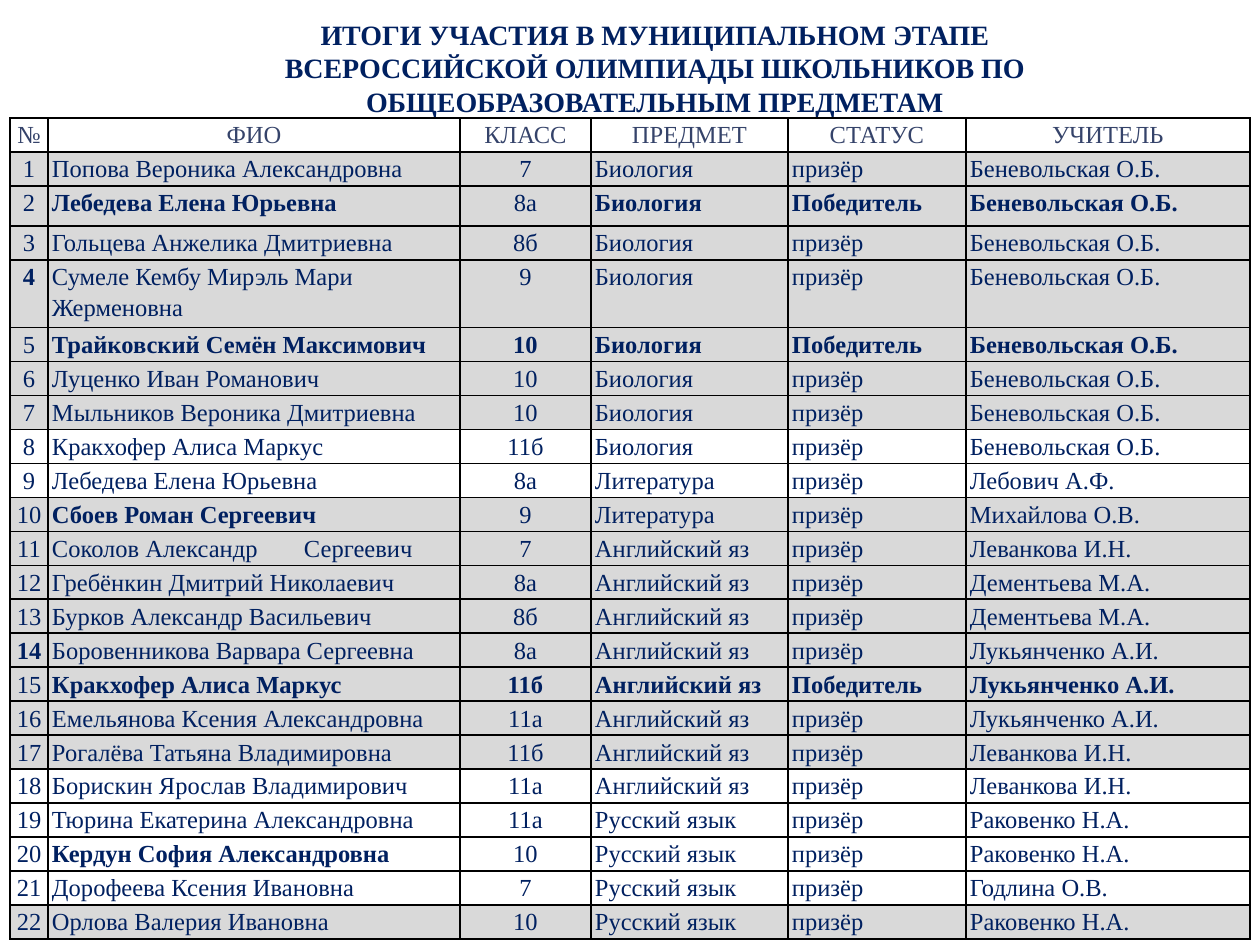
from lxml import etree
from pptx import Presentation, util as u
from pptx.dml.color import RGBColor
from pptx.enum import text
from pptx.oxml.ns import qn

TITLE = (
    "ИТОГИ УЧАСТИЯ В МУНИЦИПАЛЬНОМ ЭТАПЕ",
    "ВСЕРОССИЙСКОЙ ОЛИМПИАДЫ ШКОЛЬНИКОВ ПО ОБЩЕОБРАЗОВАТЕЛЬНЫМ ПРЕДМЕТАМ",
)
HEADER = ("№", "ФИО", "КЛАСС", "ПРЕДМЕТ", "СТАТУС", "УЧИТЕЛЬ")
BIOLOGY, LITERATURE, ENGLISH, RUSSIAN = "Биология", "Литература", "Английский яз", "Русский язык"
PRIZE, WINNER = "призёр", "Победитель"
RESULTS = [
    ("Попова Вероника Александровна", "7", BIOLOGY, PRIZE, "Беневольская О.Б."),
    ("Лебедева Елена Юрьевна", "8а", BIOLOGY, WINNER, "Беневольская О.Б."),
    ("Гольцева Анжелика Дмитриевна", "8б", BIOLOGY, PRIZE, "Беневольская О.Б."),
    ("Сумеле Кембу Мирэль Мари Жерменовна", "9", BIOLOGY, PRIZE, "Беневольская О.Б."),
    ("Трайковский Семён Максимович", "10", BIOLOGY, WINNER, "Беневольская О.Б."),
    ("Луценко Иван Романович", "10", BIOLOGY, PRIZE, "Беневольская О.Б."),
    ("Мыльников Вероника Дмитриевна", "10", BIOLOGY, PRIZE, "Беневольская О.Б."),
    ("Кракхофер Алиса Маркус", "11б", BIOLOGY, PRIZE, "Беневольская О.Б."),
    ("Лебедева Елена Юрьевна", "8а", LITERATURE, PRIZE, "Лебович А.Ф."),
    ("Сбоев Роман Сергеевич", "9", LITERATURE, PRIZE, "Михайлова О.В."),
    ("Соколов Александр\tСергеевич", "7", ENGLISH, PRIZE, "Леванкова И.Н."),
    ("Гребёнкин Дмитрий Николаевич", "8а", ENGLISH, PRIZE, "Дементьева М.А."),
    ("Бурков Александр Васильевич", "8б", ENGLISH, PRIZE, "Дементьева М.А."),
    ("Боровенникова Варвара Сергеевна", "8а", ENGLISH, PRIZE, "Лукьянченко А.И."),
    ("Кракхофер Алиса Маркус", "11б", ENGLISH, WINNER, "Лукьянченко А.И."),
    ("Емельянова Ксения Александровна", "11а", ENGLISH, PRIZE, "Лукьянченко А.И."),
    ("Рогалёва Татьяна Владимировна", "11б", ENGLISH, PRIZE, "Леванкова И.Н."),
    ("Борискин Ярослав Владимирович", "11а", ENGLISH, PRIZE, "Леванкова И.Н."),
    ("Тюрина Екатерина Александровна", "11а", RUSSIAN, PRIZE, "Раковенко Н.А."),
    ("Кердун София Александровна", "10", RUSSIAN, PRIZE, "Раковенко Н.А."),
    ("Дорофеева Ксения Ивановна", "7", RUSSIAN, PRIZE, "Годлина О.В."),
    ("Орлова Валерия Ивановна", "10", RUSSIAN, PRIZE, "Раковенко Н.А."),
]
BOLD_COLUMNS = {2: (1, 3, 4, 5), 4: (0,), 5: (1, 2, 3, 4, 5), 10: (1,),
                14: (0,), 15: (1, 2, 3, 4, 5), 20: (1,)}
PLAIN_ROWS = {0, 8, 9, 18, 19, 20, 21}
CENTRED_COLUMNS = {0, 2}

THEME = {
    "font": "Times New Roman",
    "title_size": u.Pt(16),
    "cell_size": u.Pt(14),
    "text": RGBColor.from_string("002060"),
    "header": RGBColor.from_string("35436A"),
    "shade": RGBColor.from_string("D9D9D9"),
    "border": "000000",
    "border_width": u.Pt(1),
}

PAGE_SIZE = (1260, 945)
TITLE_BOX = (118, 10, 1074, 115)
TABLE_ORIGIN = (10, 118)
COLUMN_WIDTHS = (38, 412, 131, 197, 178, 284)
ROW_HEIGHT = 34
SPECIAL_HEIGHTS = {2: 40, 3: 32, 4: 62}
CELL_MARGIN = 4


def px(length):
    return u.Emu(round(length * 914400 / 126))


def style_para(para, size, color, bold, centred):
    para.alignment = text.PP_ALIGN.CENTER if centred else text.PP_ALIGN.LEFT
    para.font.name = THEME["font"]
    para.font.size = size
    para.font.color.rgb = color
    para.font.bold = bold


def add_borders(cell):
    properties = cell._tc.get_or_add_tcPr()
    for side in ("a:lnL", "a:lnR", "a:lnT", "a:lnB"):
        line = etree.SubElement(properties, qn(side), w=str(THEME["border_width"]))
        fill = etree.SubElement(line, qn("a:solidFill"))
        etree.SubElement(fill, qn("a:srgbClr"), val=THEME["border"])


def fill_cell(cell, value, row, column):
    cell.margin_left = cell.margin_right = px(CELL_MARGIN)
    cell.margin_top = cell.margin_bottom = 0
    add_borders(cell)
    if row in PLAIN_ROWS:
        cell.fill.background()
    else:
        cell.fill.solid()
        cell.fill.fore_color.rgb = THEME["shade"]
    para = cell.text_frame.paragraphs[0]
    para.add_run().text = value
    para.line_spacing = 1.15
    style_para(para, THEME["cell_size"], THEME["text" if row else "header"],
               column in BOLD_COLUMNS.get(row, ()), row == 0 or column in CENTRED_COLUMNS)


def add_title(page):
    box = page.shapes.title
    box.left, box.top, box.width, box.height = map(px, TITLE_BOX)
    frame = box.text_frame
    frame.text = "\n".join(TITLE)
    frame.word_wrap = True
    frame.auto_size = text.MSO_AUTO_SIZE.SHAPE_TO_FIT_TEXT
    frame.vertical_anchor = text.MSO_ANCHOR.MIDDLE
    for para in frame.paragraphs:
        style_para(para, THEME["title_size"], THEME["text"], True, True)


def add_results(page):
    rows = [HEADER] + [(str(number), *result) for number, result in enumerate(RESULTS, 1)]
    heights = [SPECIAL_HEIGHTS.get(row, ROW_HEIGHT) for row in range(len(rows))]
    table = page.shapes.add_table(
        len(rows), len(HEADER), *map(px, (*TABLE_ORIGIN, sum(COLUMN_WIDTHS), sum(heights)))
    ).table
    table.first_row = table.horz_banding = False
    for column, width in zip(table.columns, COLUMN_WIDTHS):
        column.width = px(width)
    for row, (values, height) in enumerate(zip(rows, heights)):
        table.rows[row].height = px(height)
        for column, value in enumerate(values):
            fill_cell(table.cell(row, column), value, row, column)


def main():
    deck = Presentation()
    deck.slide_width, deck.slide_height = map(px, PAGE_SIZE)
    page = deck.slides.add_slide(deck.slide_layouts[5])
    add_title(page)
    add_results(page)
    deck.save("out.pptx")


if __name__ == "__main__":
    main()
